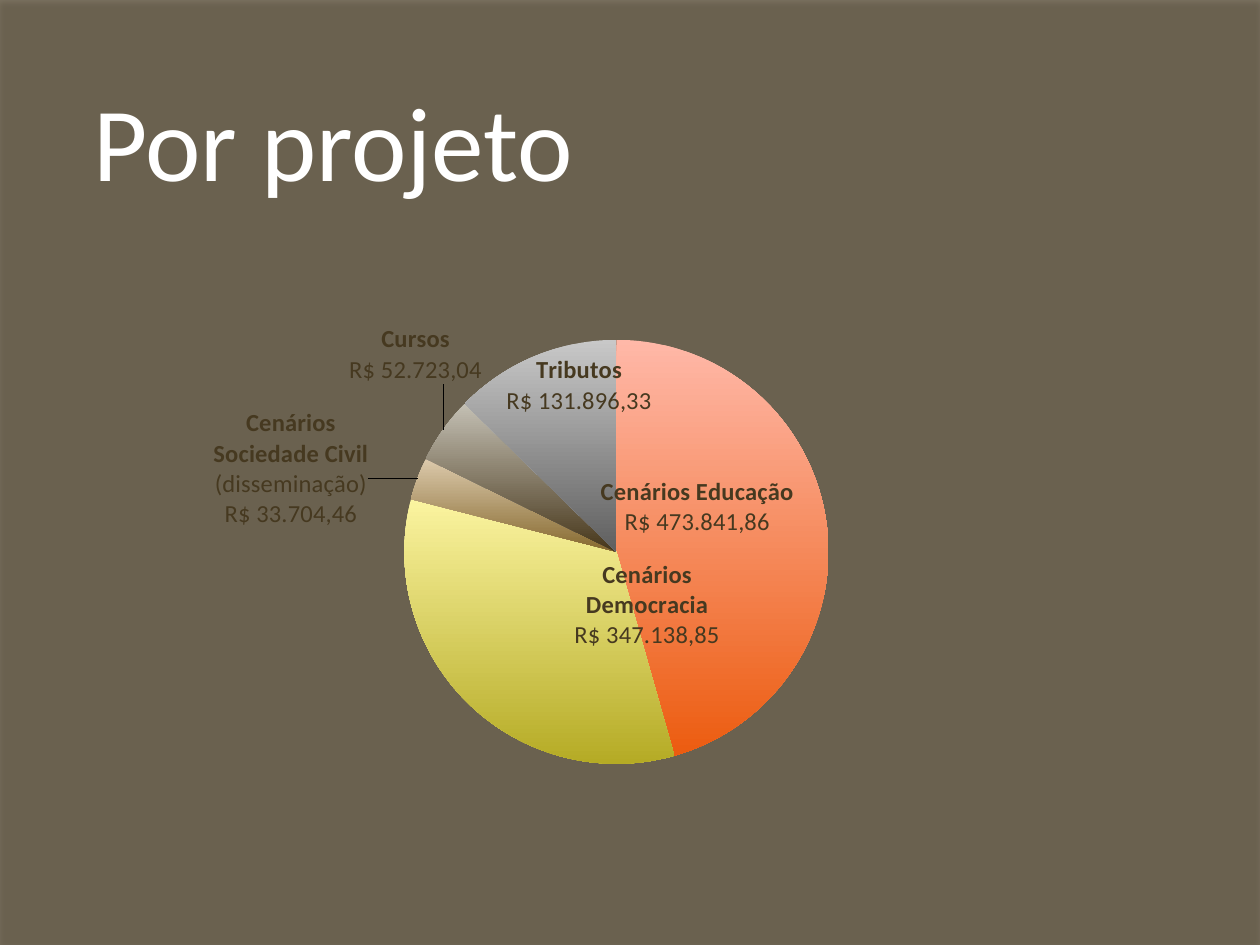
from lxml import etree
from pptx import Presentation
from pptx.chart.data import CategoryChartData
from pptx.dml.color import RGBColor
from pptx.enum.chart import XL_CHART_TYPE, XL_LABEL_POSITION
from pptx.enum.shapes import MSO_SHAPE
from pptx.enum.text import MSO_ANCHOR, PP_ALIGN
from pptx.oxml import parse_xml
from pptx.oxml.ns import nsdecls, qn
from pptx.util import Inches, Pt

PIE = XL_CHART_TYPE.PIE
CENTER = XL_LABEL_POSITION.CENTER
OUTSIDE = XL_LABEL_POSITION.OUTSIDE_END
RECTANGLE = MSO_SHAPE.RECTANGLE
MIDDLE = MSO_ANCHOR.MIDDLE
LEFT = PP_ALIGN.LEFT

FONT = "Calibri"
BROWN = "463920"
WHITE = "FFFFFF"
CURRENCY = '"R$"#,##0.00;[Red]"R$"#,##0.00'

# name, note, value, amount, gradient top and bottom,
# label position and its shift in percent of the chart
PROJECTS = [
    ("Cenários Educação", "", 473841.86, "R$ 473.841,86",
     "FFB8A8", "EC5C10", OUTSIDE, (-23.8, 3)),
    ("Cenários Democracia", "", 347138.85, "R$ 347.138,85",
     "FBF4A0", "B5AB25", CENTER, (10.7, -4.2)),
    ("Cenários Sociedade Civil", " (disseminação)", 33704.46, "R$ 33.704,46",
     "DCCAAC", "86692F", OUTSIDE, (-4.3, 9.9)),
    ("Cursos", "", 52723.04, "R$ 52.723,04",
     "C4C0B4", "46361A", OUTSIDE, (4.6, -7.6)),
    ("Tributos", "", 131896.33, "R$ 131.896,33",
     "C8C8C8", "5F5F5F", CENTER, (0.4, -12.8)),
]


def color(hex_value):
    return RGBColor.from_string(hex_value)


def style(font, size, hex_value, bold=False):
    font.name = FONT
    font.size = Pt(size)
    font.bold = bold
    font.color.rgb = color(hex_value)


def add_run(paragraph, text, size, hex_value, bold=False):
    run = paragraph.add_run()
    run.text = text
    style(run.font, size, hex_value, bold)


def manual_layout(x, y, extra=""):
    """Chart layout element, with x and y in percent of the chart."""
    return parse_xml(
        f'<c:layout {nsdecls("c")}><c:manualLayout>{extra}'
        f'<c:x val="{x / 100}"/><c:y val="{y / 100}"/>'
        '</c:manualLayout></c:layout>')


def add_backdrop(slide, left, top, width, height):
    """Translucent brown veil with a soft shadow, behind everything else."""
    veil = slide.shapes.add_shape(RECTANGLE, left, top, width, height)
    veil.fill.solid()
    veil.fill.fore_color.rgb = color(BROWN)
    veil.line.fill.background()
    fill_color = veil.fill._xPr.find(qn("a:solidFill"))[0]
    etree.SubElement(fill_color, qn("a:alpha"), val="70000")
    veil._element.spPr.append(parse_xml(
        f'<a:effectLst {nsdecls("a")}><a:outerShdw blurRad="{Pt(3.1)}" '
        f'dist="{Pt(1.8)}" dir="5400000" rotWithShape="0">'
        '<a:srgbClr val="000000"><a:alpha val="35000"/></a:srgbClr>'
        '</a:outerShdw></a:effectLst>'))
    slide.shapes._spTree.insert(2, veil._element)


def place_title(slide, left, top, width, height):
    title = slide.shapes.title
    title.left, title.top, title.width, title.height = left, top, width, height
    title.text_frame.vertical_anchor = MIDDLE
    paragraph = title.text_frame.paragraphs[0]
    paragraph.alignment = LEFT
    add_run(paragraph, "Por projeto", 60, WHITE)


def label_slice(point, name, note, amount, position, shift):
    label = point.data_label
    frame = label.text_frame
    heading = frame.paragraphs[0]
    add_run(heading, name, 14, BROWN, bold=True)
    if note:
        add_run(heading, note, 14, BROWN)
    add_run(frame.add_paragraph(), amount, 14, BROWN)
    label.position = position
    label._dLbl.find(qn("c:idx")).addnext(manual_layout(*shift))


def add_project_pie(slide, left, top, width, height):
    data = CategoryChartData(number_format=CURRENCY)
    data.categories = [name + note for name, note, *_ in PROJECTS]
    data.add_series("Series 1", [project[2] for project in PROJECTS])
    chart = slide.shapes.add_chart(PIE, left, top, width, height, data).chart
    chart.has_legend = False
    chart.has_title = False
    style(chart.font, 10, BROWN)

    plot = chart.plots[0]
    plot.vary_by_categories = True
    plot_area = chart._chartSpace.chart.plotArea
    for layout in plot_area.findall(qn("c:layout")):
        plot_area.remove(layout)
    inner = manual_layout(
        11.3, 10.5, '<c:layoutTarget val="inner"/>'
        '<c:xMode val="edge"/><c:yMode val="edge"/>')
    for side, share in (("c:w", 0.83), ("c:h", 0.79)):
        etree.SubElement(inner[0], qn(side), val=str(share))
    plot_area.insert(0, inner)

    series = plot.series[0]
    labels = series.data_labels
    labels.show_value = True
    labels.show_category_name = True
    labels.number_format = CURRENCY
    labels.number_format_is_linked = False
    style(labels.font, 14, BROWN)
    leader = labels._element.find(qn("c:showLeaderLines"))
    if leader is None:
        leader = etree.SubElement(labels._element, qn("c:showLeaderLines"))
    leader.set("val", "1")

    for index, project in enumerate(PROJECTS):
        name, note, _, amount, light, dark, position, shift = project
        point = series.points[index]
        fill = point.format.fill
        fill.gradient()
        fill.gradient_angle = 270
        for stop, shade in zip(fill.gradient_stops, (light, dark)):
            stop.color.rgb = color(shade)
        point.format.line.fill.background()
        label_slice(point, name, note, amount, position, shift)


def main():
    deck = Presentation()
    deck.slide_width, deck.slide_height = Inches(10), Inches(7.5)
    slide = deck.slides.add_slide(deck.slide_layouts[5])
    slide.background.fill.solid()
    slide.background.fill.fore_color.rgb = color(WHITE)
    add_backdrop(slide, 0, 0, deck.slide_width, deck.slide_height)
    place_title(slide, Inches(0.64), Inches(0.55), Inches(8.95), Inches(1.11))
    add_project_pie(slide, Inches(0.79), Inches(2.25), Inches(7.77), Inches(4.26))
    deck.save("out.pptx")


if __name__ == "__main__":
    main()
